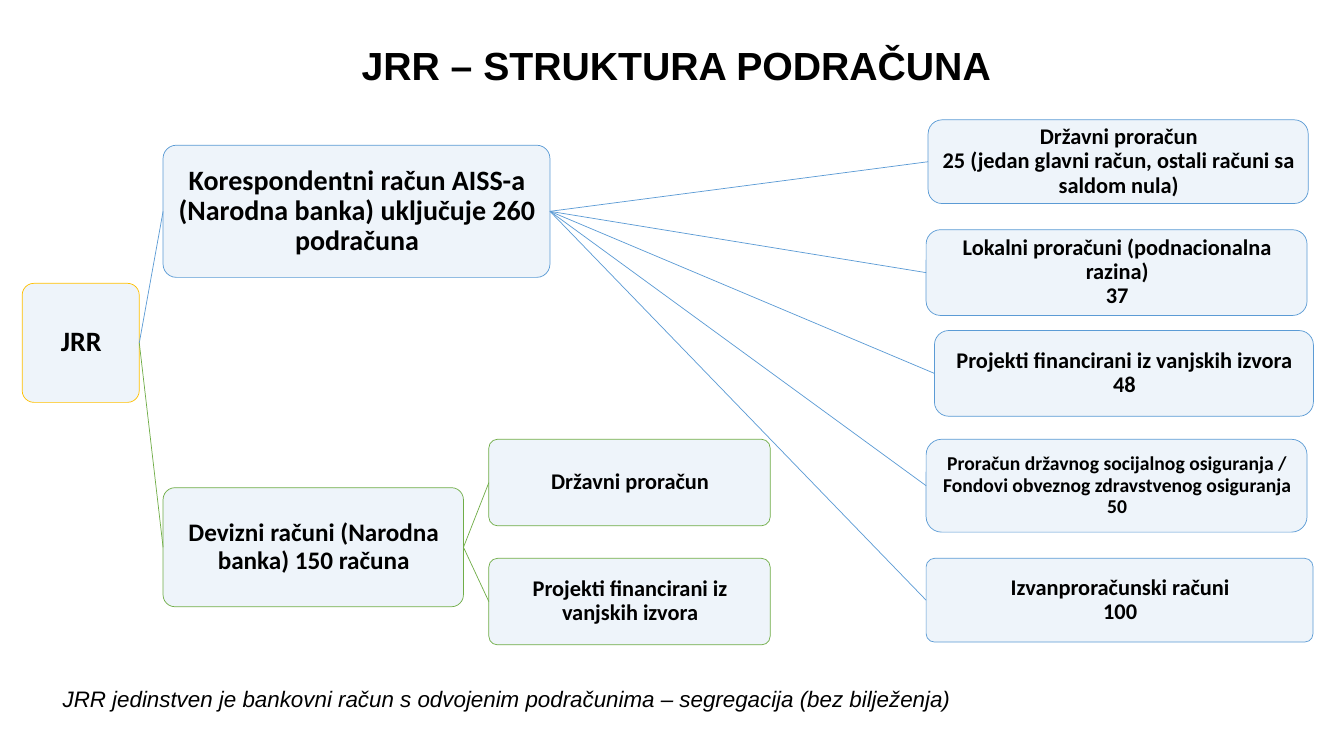
"""Build the slide showing the structure of JRR subaccounts."""
from lxml.etree import SubElement
from pptx import Presentation
from pptx.dml.color import RGBColor
from pptx.enum.shapes import MSO_CONNECTOR, MSO_SHAPE
from pptx.enum.text import MSO_ANCHOR, PP_ALIGN
from pptx.oxml.ns import qn
from pptx.util import Cm, Pt

BLACK = RGBColor(0x00, 0x00, 0x00)
PALE = RGBColor(0xBD, 0xD7, 0xEE)
BLUE = RGBColor(0x5B, 0x9B, 0xD5)
GREEN = RGBColor(0x70, 0xAD, 0x47)
GOLD = RGBColor(0xFF, 0xC0, 0x00)
LEFT_SITE, RIGHT_SITE = 1, 3
SMALL_CORNER, LARGE_CORNER = 0.1, 0.167

TITLE = "JRR – STRUKTURA PODRAČUNA"
FOOTNOTE = "JRR jedinstven je bankovni račun s odvojenim podračunima – segregacija (bez bilježenja)"

# name: (parent, (left, top, width, height), corner, line colour, text size, paragraphs)
ACCOUNTS = {
    "jrr": (None, (0.56, 7.14, 2.95, 3), SMALL_CORNER, GOLD, 20, ["JRR"]),
    "correspondent": ("jrr", (4.11, 3.66, 9.75, 3.33), SMALL_CORNER, BLUE, 20,
                      ["Korespondentni račun AISS-a (Narodna banka) uključuje 260 podračuna"]),
    "currency": ("jrr", (4.11, 12.29, 7.57, 3), SMALL_CORNER, GREEN, 18,
                 ["Devizni računi (Narodna banka) 150 računa"]),
    "state": ("correspondent", (23.39, 3.02, 9.58, 2.11), LARGE_CORNER, BLUE, 16,
              ["Državni proračun", "25 (jedan glavni račun, ostali računi sa saldom nula)"]),
    "local": ("correspondent", (23.34, 5.79, 9.6, 2.16), LARGE_CORNER, BLUE, 16,
              ["Lokalni proračuni (podnacionalna razina)", "37"]),
    "projects": ("correspondent", (23.55, 8.33, 9.55, 2.16), LARGE_CORNER, BLUE, 16,
                 ["Projekti financirani iz vanjskih izvora", "48"]),
    "social": ("correspondent", (23.34, 11.07, 9.6, 2.34), LARGE_CORNER, BLUE, 14,
               ["Proračun državnog socijalnog osiguranja / "
                "Fondovi obveznog zdravstvenog osiguranja", "50"]),
    "off_budget": ("correspondent", (23.34, 14.07, 9.75, 2.11), SMALL_CORNER, BLUE, 16,
                   ["Izvanproračunski računi", "100"]),
    "currency_state": ("currency", (12.32, 11.07, 7.09, 2.18), SMALL_CORNER, GREEN, 16,
                       ["Državni proračun"]),
    "currency_projects": ("currency", (12.32, 14.07, 7.09, 2.18), SMALL_CORNER, GREEN, 16,
                          ["Projekti financirani iz vanjskih izvora"]),
}


def write(s, paragraphs, font, size, margins, align, bold=False, italic=False, spacing=None):
    tf = s.text_frame
    tf.word_wrap = True
    tf.margin_left, tf.margin_top, tf.margin_right, tf.margin_bottom = map(Cm, margins)
    for i, text in enumerate(paragraphs):
        p = tf.paragraphs[0] if i == 0 else tf.add_paragraph()
        p.alignment = align
        p.line_spacing = spacing
        r = p.add_run()
        r.text = text
        r.font.name, r.font.size = font, Pt(size)
        r.font.bold, r.font.italic = bold, italic
        r.font.color.rgb = BLACK


def add_account(slide, box, corner, color, size, paragraphs):
    s = slide.shapes.add_shape(MSO_SHAPE.ROUNDED_RECTANGLE, *map(Cm, box))
    s.adjustments[0] = corner
    s.shadow.inherit = False
    s.fill.solid()
    s.fill.fore_color.rgb = PALE
    fill_color = s.fill._xPr.find(qn("a:solidFill"))[0]
    SubElement(fill_color, qn("a:alpha")).set("val", "25000")
    s.line.color.rgb = color
    s.line.width = Pt(0.5)
    s.text_frame.vertical_anchor = MSO_ANCHOR.MIDDLE
    write(s, paragraphs, "Calibri", size, (0.03, 0.03, 0, 0.03), PP_ALIGN.CENTER,
          bold=True, spacing=0.9)
    return s


def add_link(slide, parent, child, color):
    link = slide.shapes.add_connector(MSO_CONNECTOR.STRAIGHT, 0, 0, 0, 0)
    link.begin_connect(parent, RIGHT_SITE)
    link.end_connect(child, LEFT_SITE)
    link.line.color.rgb = color
    link.line.width = Pt(0.5)
    SubElement(link._element.spPr, qn("a:effectLst"))


def main():
    prs = Presentation()
    prs.slide_width, prs.slide_height = Cm(33.87), Cm(19.05)
    slide = prs.slides.add_slide(prs.slide_layouts[6])

    title = slide.shapes.add_textbox(Cm(1.7), Cm(0.91), Cm(30.68), Cm(1.45))
    write(title, [TITLE], "Arial", 28, (0.25, 0.13, 0.25, 0.13), PP_ALIGN.CENTER, bold=True)
    footnote = slide.shapes.add_textbox(Cm(0.56), Cm(17.27), Cm(32.84), Cm(1.7))
    write(footnote, [FOOTNOTE], "Arial", 16, (1.02, 0.08, 0.48, 0.08), PP_ALIGN.LEFT,
          italic=True, spacing=0.9)

    boxes = {name: add_account(slide, *account[1:]) for name, account in ACCOUNTS.items()}
    for name, (parent, _, _, color, _, _) in ACCOUNTS.items():
        if parent:
            add_link(slide, boxes[parent], boxes[name], color)

    prs.save("out.pptx")


if __name__ == "__main__":
    main()
